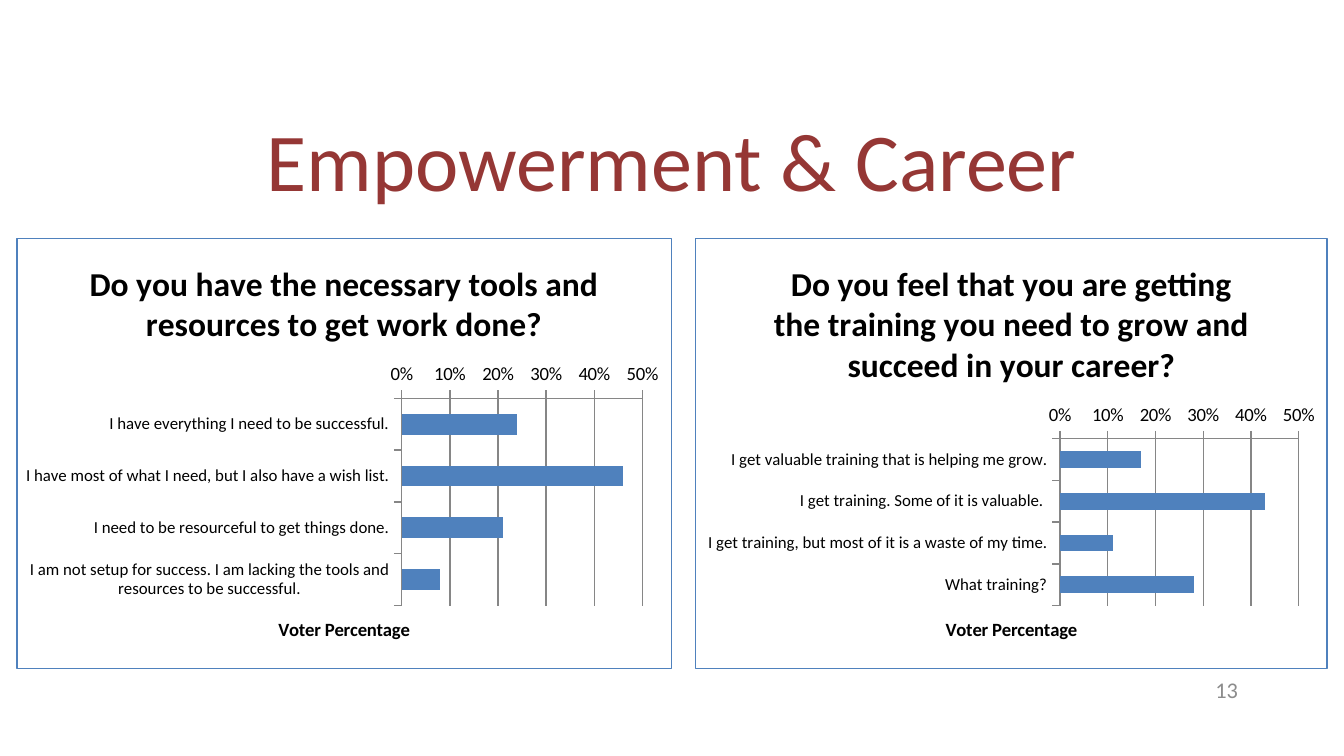
import pptx
import pptx.util
import pptx.oxml
import pptx.oxml.ns
import pptx.dml.color
import pptx.chart.data
import pptx.enum.chart
import pptx.enum.text

Pt = pptx.util.Pt
FONT = "Calibri"
BLUE = "4F81BD"
GRAY = "868686"
POLLS = [
    (
        (8.64, 127.44, 351.36, 231.12),
        "Do you have the necessary tools and resources to get work done?",
        [
            ("I have everything I need to be successful.", 0.24),
            ("I have most of what I need, but I also have a wish list.", 0.46),
            ("I need to be resourceful to get things done.", 0.21),
            ("I am not setup for success. I am lacking the tools and resources to be successful.", 0.08),
        ],
    ),
    (
        (372.24, 127.44, 339.12, 231.12),
        "Do you feel that you are getting the training you need to grow and succeed in your career?",
        [
            ("I get valuable training that is helping me grow.", 0.17),
            ("I get training. Some of it is valuable. ", 0.43),
            ("I get training, but most of it is a waste of my time.", 0.11),
            ("What training?", 0.28),
        ],
    ),
]


def color(code):
    """Turn a hex string into a colour."""
    return pptx.dml.color.RGBColor.from_string(code)


def style(font, size, code="000000", bold=False):
    """Set the face, size, colour and weight of a font."""
    font.name, font.size, font.bold = FONT, Pt(size), bold
    font.color.rgb = color(code)


def stroke(line, code):
    """Give a line a thin solid colour."""
    line.color.rgb = color(code)
    line.width = Pt(0.75)


def label(slide, box, text, size, code, align):
    """Place one line of text in a box, centred by height."""
    frame = slide.shapes.add_textbox(*map(Pt, box)).text_frame
    frame.word_wrap = True
    frame.vertical_anchor = pptx.enum.text.MSO_ANCHOR.MIDDLE
    para = frame.paragraphs[0]
    para.text, para.alignment = text, align
    style(para.font, size, code)
    return para


def head(owner, text, size):
    """Write a bold title on a chart or an axis."""
    para = owner.text_frame.paragraphs[0]
    para.text = text
    style(para.font, size, bold=True)


def border(chart, code):
    """Draw a thin frame around the chart."""
    space = pptx.oxml.ns.nsdecls("c", "a")
    frame = pptx.oxml.parse_xml(
        f'<c:spPr {space}><a:noFill/><a:ln w="{Pt(0.75)}"><a:solidFill>'
        f'<a:srgbClr val="{code}"/></a:solidFill></a:ln></c:spPr>'
    )
    chart.element.find(pptx.oxml.ns.qn("c:chart")).addnext(frame)


def poll(slide, box, title, votes):
    """Place a bar chart of one survey question."""
    kinds = pptx.enum.chart
    data = pptx.chart.data.CategoryChartData(number_format="0%")
    data.categories = [name for name, _ in votes]
    data.add_series("Series 1", [share for _, share in votes])
    chart = slide.shapes.add_chart(
        kinds.XL_CHART_TYPE.BAR_CLUSTERED, *map(Pt, box), data
    ).chart
    style(chart.font, 10)
    border(chart, BLUE)
    chart.has_legend = False
    chart.has_title = True
    head(chart.chart_title, title, 18)

    plot = chart.plots[0]
    plot.gap_width, plot.vary_by_categories = 150, False
    fill = plot.series[0].format.fill
    fill.solid()
    fill.fore_color.rgb = color(BLUE)

    cats, vals = chart.category_axis, chart.value_axis
    for axis in (cats, vals):
        axis.major_tick_mark = kinds.XL_TICK_MARK.OUTSIDE
        stroke(axis.format.line, GRAY)
    cats.reverse_order = True
    style(cats.tick_labels.font, 9)
    vals.minimum_scale, vals.maximum_scale, vals.major_unit = 0, 0.5, 0.1
    vals.has_major_gridlines = True
    stroke(vals.major_gridlines.format.line, GRAY)
    vals.tick_labels.number_format = "0%"
    vals.tick_labels.number_format_is_linked = False
    style(vals.tick_labels.font, 10)
    vals.has_title = True
    head(vals.axis_title, "Voter Percentage", 10)


def main():
    """Build the slide and save it."""
    deck = pptx.Presentation()
    deck.slide_width, deck.slide_height = Pt(720), Pt(405)
    slide = deck.slides.add_slide(deck.slide_layouts[6])
    align = pptx.enum.text.PP_ALIGN
    title = label(slide, (49.68, 48.96, 620.64, 78.48),
                  "Empowerment & Career", 44, "953735", align.CENTER)
    title.line_spacing = 0.9
    for box, ask, votes in POLLS:
        poll(slide, box, ask, votes)
    label(slide, (508.32, 358.56, 162, 21.6), "13", 12, "8C8C8C", align.RIGHT)
    deck.save("out.pptx")


if __name__ == "__main__":
    main()
